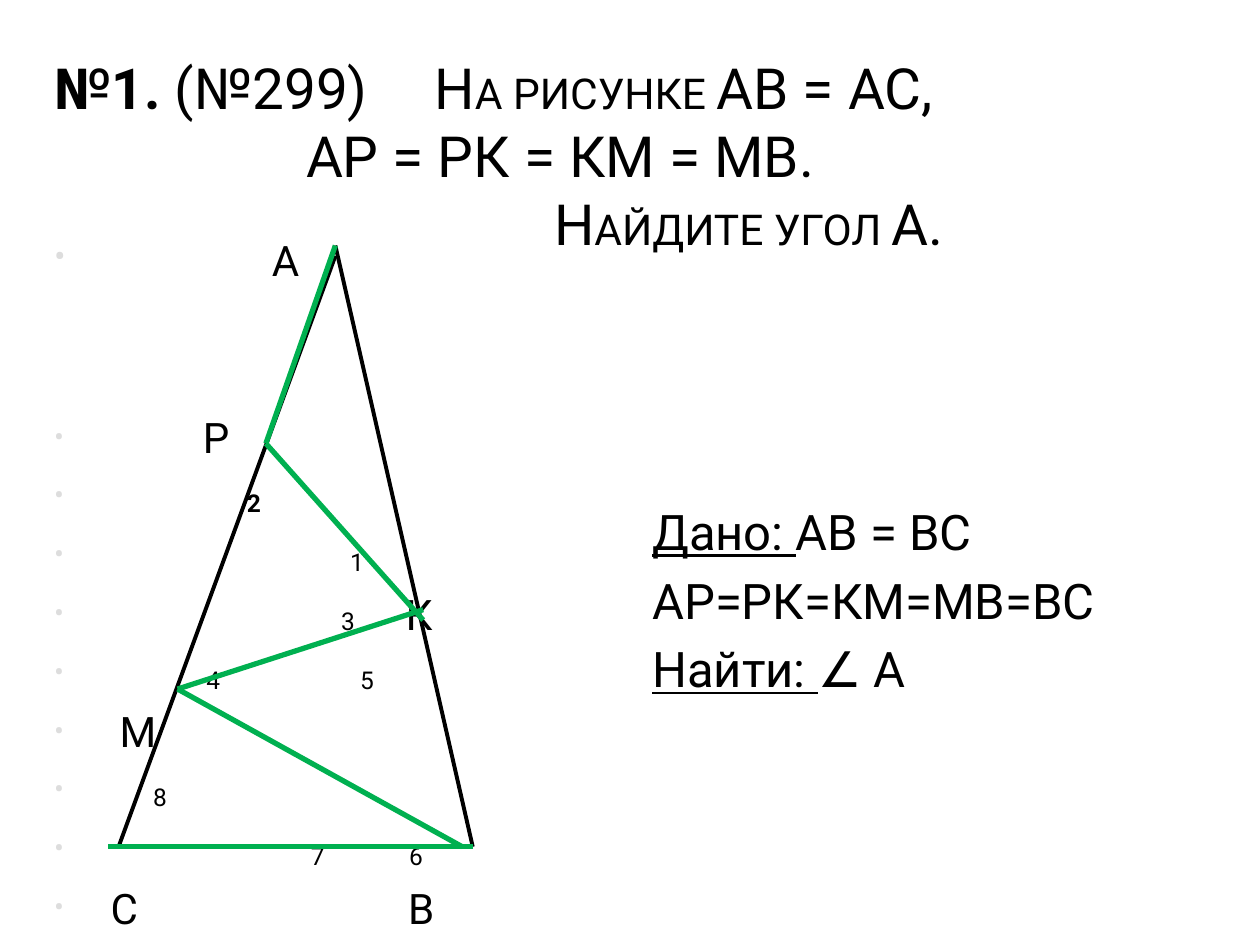
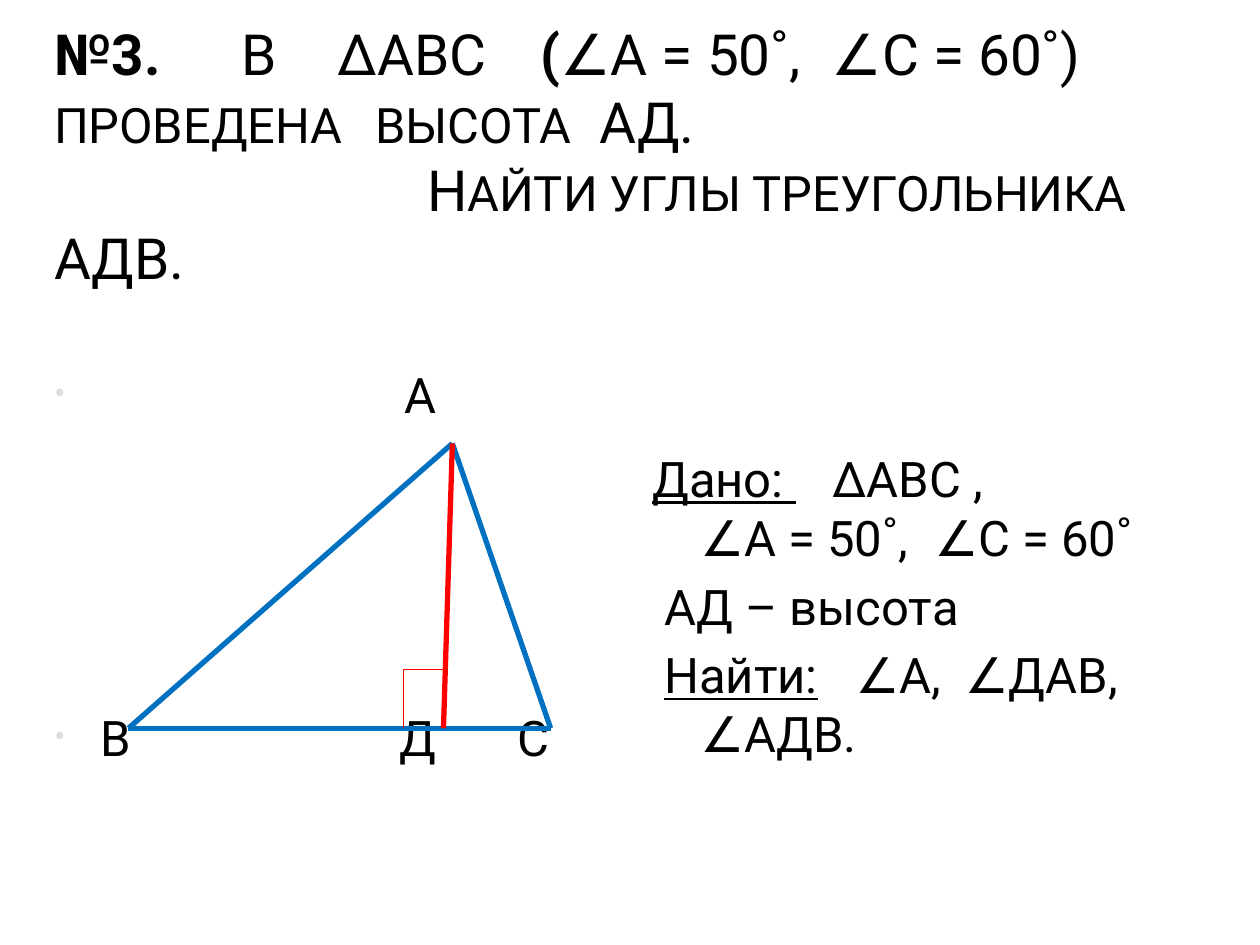
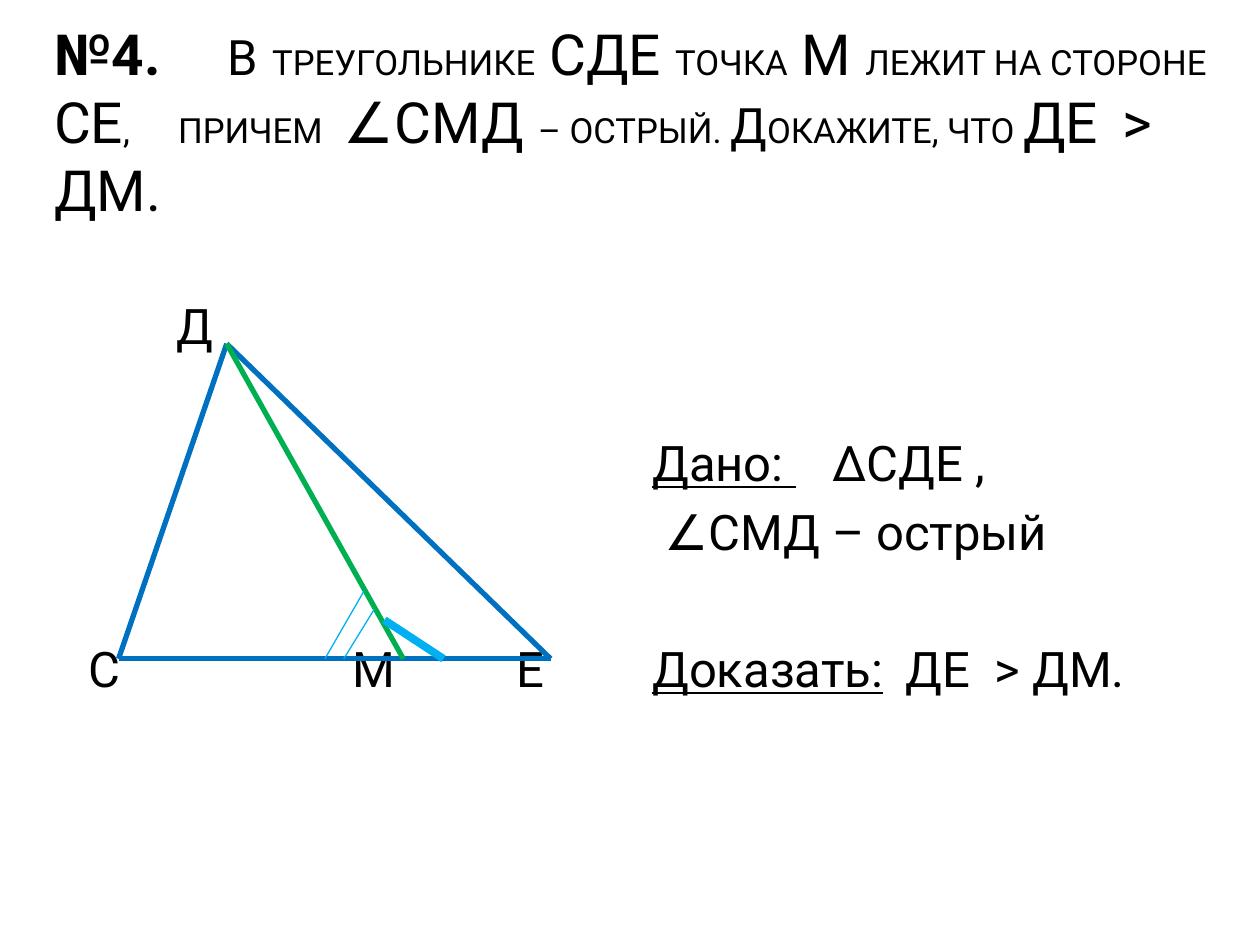
from collections import namedtuple
from dataclasses import dataclass

from lxml.etree import SubElement
from pptx import Presentation
from pptx.dml.color import RGBColor as Rgb
from pptx.enum.shapes import MSO_CONNECTOR as Link
from pptx.enum.text import MSO_ANCHOR as Anchor
from pptx.oxml.ns import qn
from pptx.util import Cm, Pt


@dataclass(frozen=True)
class Theme:
    font: str = "Roboto"
    ink: str = "000000"
    bullet: str = "DDDDDD"
    title: float = 32.4
    given: float = 28
    letter: float = 24


THEME = Theme()

# Text styles: font attributes that differ from the row's own size
STYLES = {
    "": {},
    "bold": {"bold": True},
    "under": {"underline": True},
    "cap27": {"size": Pt(27.9)},
    "cap24": {"size": Pt(24.3)},
    "cap19": {"size": Pt(19.8)},
    "letter": {"size": Pt(THEME.letter)},
    "digit": {"size": Pt(14)},
    "digit bold": {"size": Pt(14), "bold": True},
}

# Line styles: colour and width in points
SIDE = ("0070C0", 3)
OUTLINE = ("000000", 2.25)
GREEN = ("00B050", 3)
HEIGHT = ("FF0000", 3)
RIGHT_ANGLE = ("FF0000", 0.75)
ARC = ("00B0F0", 0.75)
OUTER_ARC = ("00B0F0", 4.5)

# skip: free rows above; lead: small gap above; tabs in cm
Row = namedtuple("Row", "runs tabs size skip lead bullet",
                 defaults=((), THEME.given, 0, True, False))


def title_row(tabs, *runs):
    return Row(runs, tabs, THEME.title, lead=False)


def marks(size, skip, bullet, *labels):
    """Row of figure labels, each given as (left, text, style)."""
    runs = []
    for _, text, style in labels:
        runs += [("\t", ""), (text, style)]
    return Row(runs, [left for left, _, _ in labels], size, skip, True, bullet)


# ---------- Content (lengths in cm) ----------
PROBLEMS = [
    {
        "title_shift": 1.37,
        "title": [
            title_row([7.67], ("№1.", "bold"), (" (№299)\tН", ""),
                      ("А РИСУНКЕ ", "cap24"), ("АВ = АС,", "")),
            title_row([5.08], ("\tАР = РК = КМ = МВ.", "")),
            title_row([10.08], ("\tН", ""), ("АЙДИТЕ УГОЛ ", "cap24"), ("А.", "")),
        ],
        "figure_box": (0.84, 4.45, 11.63, 13.82),
        "figure": [
            marks(28, 0, True, (4.39, "А", "letter")),
            marks(24, 2, True, (3.0, "Р", "")),
            marks(24, 0, True, (3.89, "2", "digit bold")),
            marks(24, 0, True, (5.97, "1", "digit")),
            marks(24, 0, True, (5.79, "3", "digit"), (7.09, "К", "")),
            marks(24, 0, True, (3.07, "4", "digit"), (6.17, "5", "digit")),
            marks(24, 0, True, (1.32, "М", "")),
            marks(24, 0, True, (2.0, "8", "digit")),
            marks(24, 0, True, (5.18, "7", "digit"), (7.16, "6", "digit")),
            marks(24, 0, True, (1.14, "С", ""), (7.14, "В", "")),
        ],
        "given_box": (12.9, 4.45, 12.07, 13.13),
        "given": [
            Row([("Дано: ", "under"), ("АВ = ВС", "")], skip=4),
            Row([("АР=РК=КМ=МВ=ВС", "")]),
            Row([("Найти: ", "under"), ("∠ А", "")]),
        ],
        "points": {
            "A": (6.76, 4.95), "A low": (6.76, 5.16), "P": (5.36, 8.94),
            "K": (8.53, 12.29), "K low": (8.53, 12.5), "M": (3.58, 13.89),
            "C": (2.39, 17.07), "C left": (2.18, 17.07),
            "B": (9.53, 17.07), "B left": (9.32, 17.07),
        },
        "lines": [
            ("C", "A low", OUTLINE), ("A", "B", OUTLINE),
            ("C left", "B", GREEN), ("M", "B left", GREEN), ("M", "K", GREEN),
            ("K low", "P", GREEN), ("P", "A", GREEN),
        ],
    },
    {
        "title_shift": 1.37,
        "title": [
            title_row([3.78, 5.72, 9.8, 15.67], ("№3.", "bold"),
                      ("\tВ\t∆АВС\t", ""), ("(", "bold"),
                      ("∠А = 50˚,\t∠С = 60˚)", "")),
            title_row([6.48, 11], ("ПРОВЕДЕНА\tВЫСОТА\t", "cap27"), ("АД.", "")),
            title_row([7.52], ("\tН", ""), ("АЙТИ УГЛЫ ТРЕУГОЛЬНИКА", "cap27")),
            title_row([], ("АДВ.", "")),
        ],
        "figure_box": (0.84, 4.45, 11.63, 13.13),
        "figure": [
            marks(28, 2, True, (7.06, "А", "")),
            marks(28, 4, True, (0.93, "В", ""), (6.97, "Д", ""), (9.35, "С", "")),
        ],
        "given_box": (12.9, 6.15, 12.07, 11.4),
        "given": [
            Row([("Дано: ", "under"), ("\t∆АВС ,", "")], [3.63], skip=2),
            Row([("\t∠А = 50˚,\t∠С = 60˚", "")], [0.97, 5.69], lead=False),
            Row([(" АД – высота", "")]),
            Row([(" ", ""), ("Найти:", "under"), ("\t∠А,\t∠ДАВ,", "")], [4.1, 6.3]),
            Row([("\t∠АДВ.", "")], [0.97], lead=False),
        ],
        "points": {
            "A": (9.12, 8.94), "B": (2.59, 14.68), "C": (11.1, 14.68),
            "D": (8.94, 14.68), "on AD": (8.94, 13.49),
            "corner": (8.13, 13.49), "on BC": (8.13, 14.68),
        },
        "lines": [
            ("B", "C", SIDE), ("B", "A", SIDE), ("A", "C", SIDE),
            ("A", "D", HEIGHT),
            ("on AD", "corner", RIGHT_ANGLE), ("corner", "on BC", RIGHT_ANGLE),
        ],
    },
    {
        "title_shift": 0,
        "title": [
            title_row([3.5], ("№4.\t", "bold"), ("В", "cap27"), (" ", "bold"),
                      ("ТРЕУГОЛЬНИКЕ", "cap19"), (" СДЕ ", ""), ("ТОЧКА", "cap19"),
                      (" М ", ""), ("ЛЕЖИТ НА СТОРОНЕ", "cap19")),
            title_row([2.5, 5.84, 21.54], ("СЕ", ""), (",\tПРИЧЕМ\t", "cap19"),
                      ("∠СМД ", ""), ("– ОСТРЫЙ. ", "cap19"), ("Д", "cap27"),
                      ("ОКАЖИТЕ, ЧТО ", "cap19"), ("ДЕ\t>", "")),
            title_row([], ("ДМ.", "")),
        ],
        "figure_box": (0.84, 4.45, 11.63, 13.13),
        "figure": [
            marks(28, 1, False, (2.46, "Д", "")),
            marks(28, 4, False, (0.69, "С", ""), (6.02, "М", ""), (9.32, "Е", "")),
        ],
        "given_box": (12.9, 4.45, 12.07, 13.13),
        "given": [
            Row([("Дано: ", "under"), ("\t∆СДЕ ,", "")], [3.63], skip=3),
            Row([(" ∠СМД – острый", "")]),
            Row([("Доказать:", "under"), ("\tДЕ\t> ДМ.", "")], [5.1, 6.9], skip=1),
        ],
        "points": {
            "D": (4.57, 6.93), "C": (2.39, 13.28), "E": (11.1, 13.28),
            "M": (8.13, 13.28),
            "inner top": (7.54, 12.29), "inner foot": (6.93, 13.28),
            "outer top": (7.34, 11.91), "outer foot": (6.55, 13.28),
            "right top": (7.75, 12.5), "right foot": (8.94, 13.28),
        },
        "lines": [
            ("C", "E", SIDE), ("C", "D", SIDE), ("D", "E", SIDE),
            ("D", "M", GREEN),
            ("inner top", "inner foot", ARC), ("outer top", "outer foot", ARC),
            ("right top", "right foot", OUTER_ARC),
        ],
    },
]
TITLE_BOX = (0.84, 1.27, 24.13, 2.34)


# ---------- Drawing ----------
def add_bullet(props):
    colour = SubElement(props, qn("a:buClr"))
    SubElement(colour, qn("a:srgbClr"), val=THEME.bullet)
    SubElement(props, qn("a:buSzPct"), val="70000")
    SubElement(props, qn("a:buFont"), typeface=THEME.font)
    SubElement(props, qn("a:buChar"), char="•")


def add_tabs(props, tabs):
    stops = SubElement(props, qn("a:tabLst"))
    for left in tabs:
        SubElement(stops, qn("a:tab"), pos=str(int(Cm(left))), algn="l")


def add_rows(slide, box, rows, anchor=Anchor.TOP, shift=0):
    frame = slide.shapes.add_textbox(*map(Cm, box)).text_frame
    # Free rows above the first one move the whole text down
    first_gap = Pt(rows[0].skip * rows[0].size * 1.4)
    for name, value in {"word_wrap": True, "vertical_anchor": anchor,
                        "margin_top": Cm(0.13 + shift) + first_gap}.items():
        setattr(frame, name, value)
    for index, row in enumerate(rows):
        line = frame.add_paragraph() if index else frame.paragraphs[0]
        gap = row.size * (0.2 * row.lead + 1.4 * row.skip) if index else 0
        line.space_before = Pt(gap)
        props = line._p.get_or_add_pPr()
        if row.bullet:
            add_bullet(props)
        if row.tabs:
            add_tabs(props, row.tabs)
        for text, style in row.runs:
            run = line.add_run()
            run.text = text
            look = {"name": THEME.font, "size": Pt(row.size), **STYLES[style]}
            for name, value in look.items():
                setattr(run.font, name, value)
            run.font.color.rgb = Rgb.from_string(THEME.ink)


def add_line(slide, start, end, style):
    colour, width = style
    line = slide.shapes.add_connector(Link.STRAIGHT, *map(Cm, start + end))
    line.line.color.rgb = Rgb.from_string(colour)
    line.line.width = Pt(width)
    SubElement(line._element.spPr, qn("a:effectLst"))


def main():
    deck = Presentation()
    deck.slide_width, deck.slide_height = Cm(25.4), Cm(19.05)
    for problem in PROBLEMS:
        slide = deck.slides.add_slide(deck.slide_layouts[6])
        add_rows(slide, TITLE_BOX, problem["title"], Anchor.MIDDLE,
                 problem["title_shift"])
        for part in ("figure", "given"):
            add_rows(slide, problem[part + "_box"], problem[part])
        points = problem["points"]
        for start, end, style in problem["lines"]:
            add_line(slide, points[start], points[end], style)
    deck.save("out.pptx")


if __name__ == "__main__":
    main()
